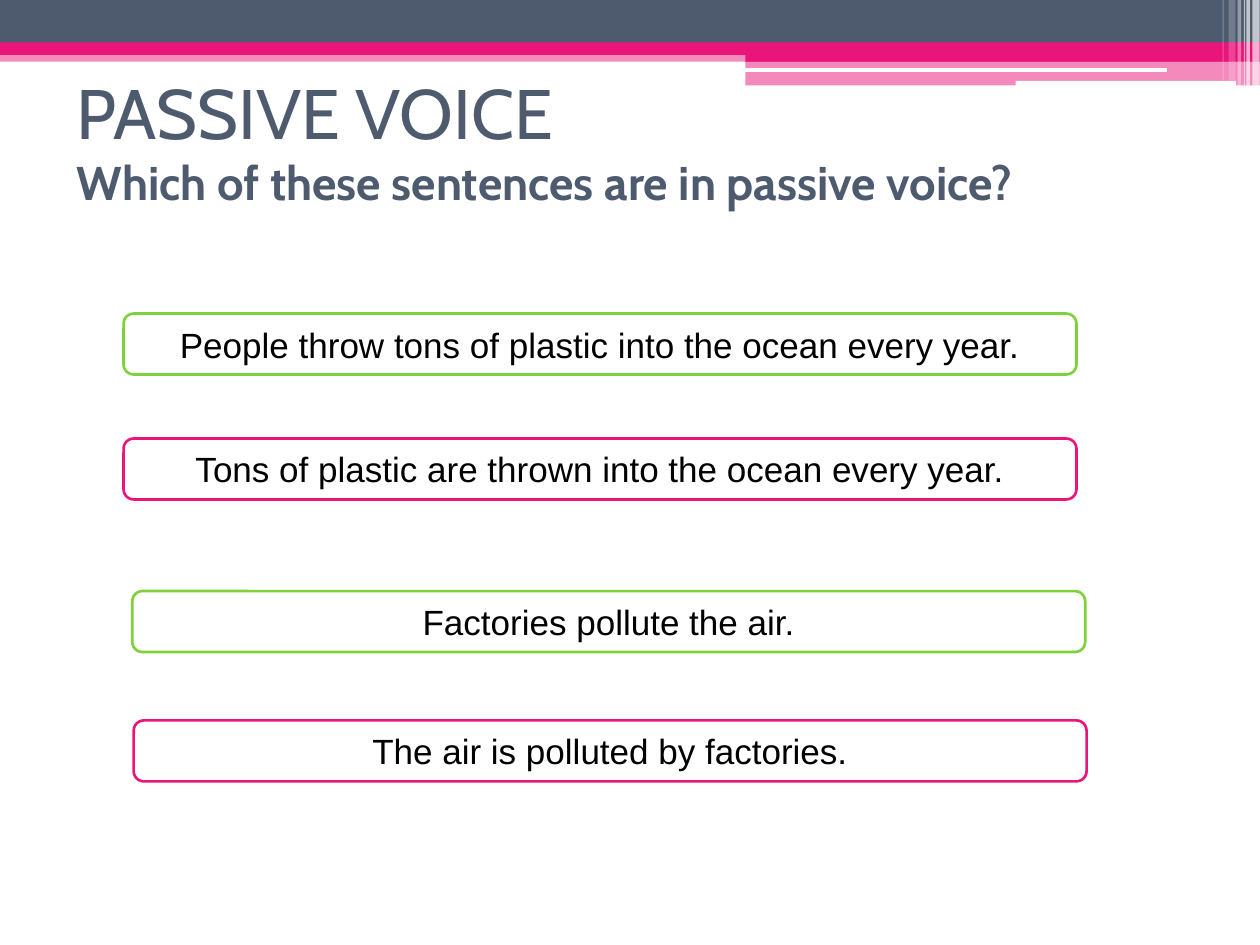
from pptx import Presentation
from pptx.dml.color import RGBColor
from pptx.enum.shapes import MSO_SHAPE as Preset
from pptx.enum.text import MSO_ANCHOR as Anchor, PP_ALIGN as Align
from pptx.oxml.ns import qn
from pptx.util import Pt
from lxml.etree import SubElement

SLATE = RGBColor(0x4E, 0x5B, 0x6F)
PINK = RGBColor(0xEA, 0x15, 0x7A)
GREEN = RGBColor(0x7F, 0xD1, 0x3B)
WHITE = RGBColor(0xFF, 0xFF, 0xFF)
BLACK = RGBColor(0x00, 0x00, 0x00)

# left, top, width, height, colour, opacity in percent
BANDS = [
    (0, 28.8, 720, 6.5, PINK, 50),
    (0, 0, 720, 24.5, SLATE, 100),
    (0, 24.2, 720, 7.2, PINK, 100),
    (426, 28.1, 294, 7.2, PINK, 100),
    (426, 34.6, 294, 14.2, PINK, 50),
]
WHITE_BARS = [(425.6, 38.9, 241.2, 2.2), (580.4, 46.2, 126, 2.8)]
# left, width, height, opacity in percent
STRIPES = [
    (715.6, 4.2, 49, 65),
    (712.2, 2, 49, 65),
    (710.8, 0.7, 49, 60),
    (707.2, 2, 49, 40),
    (702, 4, 46.1, 20),
    (698.6, 0.7, 46.1, 30),
]
# left, top, outline colour, text
SENTENCES = [
    (70.6, 179.2, GREEN, "People throw tons of plastic into the ocean every year."),
    (70.6, 250.6, PINK, "Tons of plastic are thrown into the ocean every year."),
    (75.6, 337.8, GREEN, "Factories pollute the air."),
    (76.4, 411.7, PINK, "The air is polluted by factories."),
]


def add_filled_shape(slide, preset, box, colour, opacity=100):
    shape = slide.shapes.add_shape(preset, *map(Pt, box))
    shape.shadow.inherit = False
    shape.fill.solid()
    shape.fill.fore_color.rgb = colour
    shape.line.fill.background()
    if opacity < 100:
        colour_element = shape.fill._xPr.find(qn("a:solidFill"))[0]
        SubElement(colour_element, qn("a:alpha"), val=str(opacity * 1000))
    return shape


def add_header(slide):
    for *box, colour, opacity in BANDS:
        add_filled_shape(slide, Preset.RECTANGLE, box, colour, opacity)
    for box in WHITE_BARS:
        add_filled_shape(slide, Preset.ROUNDED_RECTANGLE, box, WHITE)
    for left, width, height, opacity in STRIPES:
        add_filled_shape(slide, Preset.RECTANGLE, (left, 0, width, height), WHITE, opacity)


def format_run(run, font_name, size, colour, bold=False):
    run.font.name = font_name
    run.font.size = Pt(size)
    run.font.color.rgb = colour
    run.font.bold = bold


def add_title(slide):
    text_box = slide.shapes.add_textbox(Pt(36.7), Pt(20.9), Pt(648), Pt(118))
    text_frame = text_box.text_frame
    text_frame.word_wrap = True
    text_frame.vertical_anchor = Anchor.MIDDLE
    paragraph = text_frame.paragraphs[0]
    paragraph.text = "PASSIVE VOICE\vWhich of these sentences are in passive voice?"
    heading, question = paragraph.runs
    format_run(heading, "Cabin", 40, SLATE)
    format_run(question, "Cabin", 27, SLATE, bold=True)


def add_sentence(slide, left, top, outline, text):
    shape = add_filled_shape(slide, Preset.ROUNDED_RECTANGLE, (left, top, 544.5, 34.8), WHITE)
    shape.line.color.rgb = outline
    shape.line.width = Pt(1.5)
    text_frame = shape.text_frame
    text_frame.text = text
    text_frame.word_wrap = True
    text_frame.vertical_anchor = Anchor.MIDDLE
    paragraph = text_frame.paragraphs[0]
    paragraph.alignment = Align.CENTER
    format_run(paragraph.runs[0], "Arial", 20, BLACK)


def main():
    presentation = Presentation()
    presentation.slide_width, presentation.slide_height = Pt(720), Pt(540)
    slide = presentation.slides.add_slide(presentation.slide_layouts[6])
    add_header(slide)
    add_title(slide)
    for sentence in SENTENCES:
        add_sentence(slide, *sentence)
    presentation.save("out.pptx")


if __name__ == "__main__":
    main()
